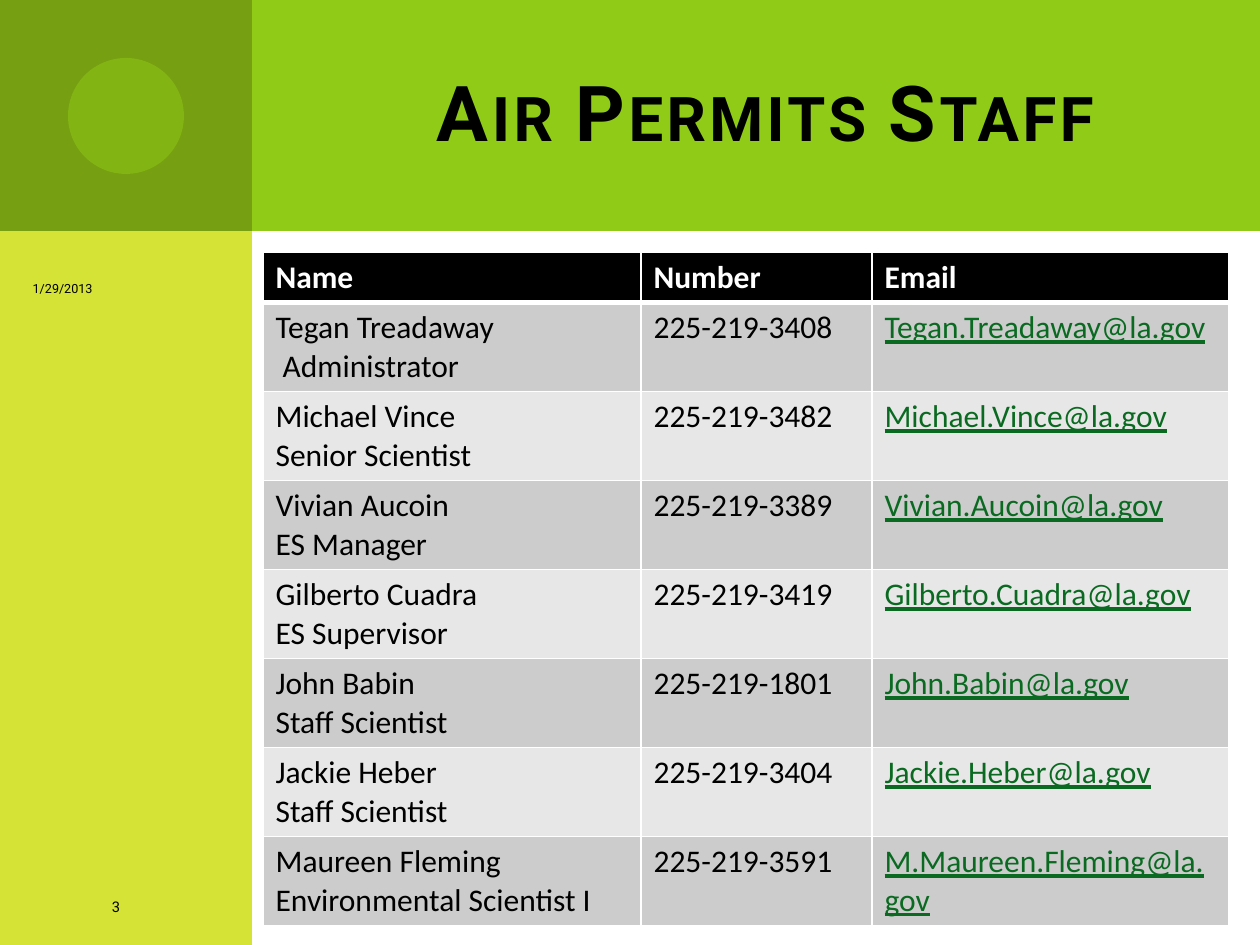
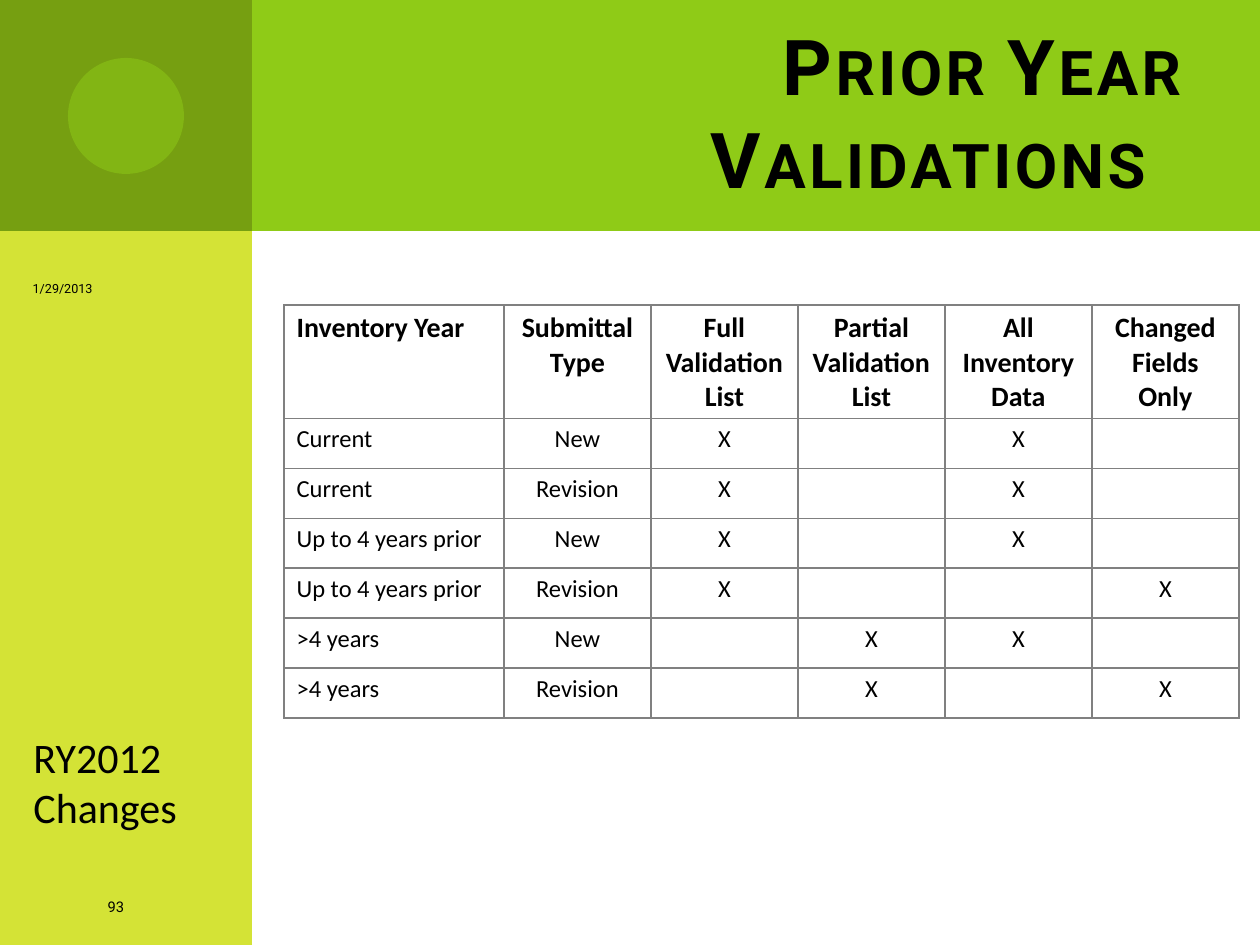
"""Builds two air permit slides, a staff directory and a validation matrix, on one green frame."""
from lxml import etree
from pptx import Presentation
from pptx.dml.color import RGBColor
from pptx.enum import shapes, text
from pptx.oxml.ns import qn
from pptx.util import Emu, Pt

BLACK = RGBColor(0x00, 0x00, 0x00)
WHITE = RGBColor(0xFF, 0xFF, 0xFF)
GREEN = RGBColor(0x8F, 0xCB, 0x17)
DARK_GREEN = RGBColor(0x76, 0x9F, 0x11)
LIME = RGBColor(0xD4, 0xE3, 0x36)
EMAIL_GREEN = RGBColor(0x0A, 0x6A, 0x21)
DARK_ROW = RGBColor(0xCC, 0xCC, 0xCC)
LIGHT_ROW = RGBColor(0xE7, 0xE7, 0xE7)
GRID_GREY = RGBColor(0x80, 0x80, 0x80)

HEADING_FONT, BODY_FONT = "Roboto", "Calibri"
DATE = "1/29/2013"
SIDEBAR_NOTE = "RY2012 Changes"

STAFF_HEADER = ("Name", "Number", "Email")
STAFF = [
    ("Tegan Treadaway\n Administrator", "225-219-3408", "Tegan.Treadaway@la.gov"),
    ("Michael Vince\nSenior Scientist", "225-219-3482", "Michael.Vince@la.gov"),
    ("Vivian Aucoin\nES Manager", "225-219-3389", "Vivian.Aucoin@la.gov"),
    ("Gilberto Cuadra\nES Supervisor", "225-219-3419", "Gilberto.Cuadra@la.gov"),
    ("John Babin\nStaff Scientist", "225-219-1801", "John.Babin@la.gov"),
    ("Jackie Heber\nStaff Scientist", "225-219-3404", "Jackie.Heber@la.gov"),
    ("Maureen Fleming\nEnvironmental Scientist I", "225-219-3591", "M.Maureen.Fleming@la.gov"),
]

VALIDATION_HEADER = ("Inventory Year", "Submittal Type", "Full Validation List",
                     "Partial Validation List", "All Inventory Data", "Changed Fields Only")
VALIDATIONS = [
    ("Current", "New", "X", "", "X", ""),
    ("Current", "Revision", "X", "", "X", ""),
    ("Up to 4 years prior", "New", "X", "", "X", ""),
    ("Up to 4 years prior", "Revision", "X", "", "", "X"),
    (">4 years", "New", "", "X", "X", ""),
    (">4 years", "Revision", "", "X", "", "X"),
]

BANDS = [
    (shapes.MSO_SHAPE.RECTANGLE, (63, 0, 1197, 231), GREEN, 100),
    (shapes.MSO_SHAPE.RECTANGLE, (0, 0, 252, 945), LIME, 100),
    (shapes.MSO_SHAPE.RECTANGLE, (0, 0, 252, 231), DARK_GREEN, 100),
    (shapes.MSO_SHAPE.OVAL, (68, 58, 116, 116), GREEN, 50),
]
LEFT, CENTER, RIGHT = text.PP_ALIGN.LEFT, text.PP_ALIGN.CENTER, text.PP_ALIGN.RIGHT
MIDDLE, TOP = text.MSO_ANCHOR.MIDDLE, text.MSO_ANCHOR.TOP


def px(length):
    return Emu(round(length * 914400 / 126))


def style(paragraph, font, size, color=BLACK, bold=False, align=LEFT, underline=False, **extra):
    paragraph.alignment = align
    for run in paragraph.runs:
        run.font.name, run.font.size = font, Pt(size)
        run.font.bold, run.font.underline = bold, underline
        run.font.color.rgb = color
        for key, value in extra.items():
            run.font._element.set(key, value)
    if not paragraph.runs:
        etree.SubElement(paragraph._p, qn("a:endParaRPr"), sz=str(size * 100))


def add_label(slide, words, box, anchor, *look, **options):
    frame = slide.shapes.add_textbox(*map(px, box)).text_frame
    frame.word_wrap, frame.vertical_anchor = True, anchor
    frame.text = words
    style(frame.paragraphs[0], *look, **options)


def add_frame(deck, title, title_box, number):
    slide = deck.slides.add_slide(deck.slide_layouts[6])
    for kind, box, color, opacity in BANDS:
        band = slide.shapes.add_shape(kind, *map(px, box))
        band.shadow.inherit = False
        band.line.fill.background()
        band.fill.solid()
        band.fill.fore_color.rgb = color
        if opacity < 100:
            tint = band.fill._xPr.find(".//" + qn("a:srgbClr"))
            etree.SubElement(tint, qn("a:alpha"), val=str(opacity * 1000))
    add_label(slide, title, title_box, MIDDLE, HEADING_FONT, 44,
              bold=True, align=RIGHT, cap="small", spc="200")
    add_label(slide, number, (53, 884, 126, 42), MIDDLE, HEADING_FONT, 10.5,
              align=CENTER, cap="small")
    add_label(slide, DATE, (0, 262, 105, 50), MIDDLE, HEADING_FONT, 9,
              align=RIGHT, cap="small")
    return slide


def set_borders(cell, color, top=1, bottom=1):
    properties = cell._tc.get_or_add_tcPr()
    for place, (side, width) in enumerate((("L", 1), ("R", 1), ("T", top), ("B", bottom))):
        line = etree.Element(qn("a:ln" + side), w=str(Pt(width)))
        fill = etree.SubElement(line, qn("a:solidFill"))
        etree.SubElement(fill, qn("a:srgbClr"), val=str(color))
        properties.insert(place, line)


def add_grid(slide, rows, corner, widths, heights, border, header_rule, fill_of, look_of):
    size = (sum(widths), sum(heights))
    grid = slide.shapes.add_table(len(rows), len(widths), *map(px, corner + size)).table
    for column, width in zip(grid.columns, widths):
        column.width = px(width)
    for r, (row, height) in enumerate(zip(rows, heights)):
        grid.rows[r].height = px(height)
        for c, words in enumerate(row):
            cell = grid.cell(r, c)
            cell.text_frame.text = words
            for paragraph in cell.text_frame.paragraphs:
                style(paragraph, BODY_FONT, **look_of(r, c))
            fill = fill_of(r)
            if fill is None:
                cell.fill.background()
            else:
                cell.fill.solid()
                cell.fill.fore_color.rgb = fill
            set_borders(cell, border, top=header_rule if r == 1 else 1,
                        bottom=header_rule if r == 0 else 1)


def staff_fill(row):
    return BLACK if row == 0 else DARK_ROW if row % 2 else LIGHT_ROW


def staff_look(row, column):
    if row == 0:
        return dict(size=18, color=WHITE, bold=True)
    is_email = column == 2
    return dict(size=18, color=EMAIL_GREEN if is_email else BLACK, underline=is_email)


def validation_look(row, column):
    return dict(size=14 if row else 16, bold=row == 0, align=CENTER if column else LEFT)


def main():
    deck = Presentation()
    deck.slide_width, deck.slide_height = px(1260), px(945)

    staff = add_frame(deck, "Air Permits Staff", (95, 32, 1071, 158), "3")
    add_grid(staff, [STAFF_HEADER] + STAFF, (263, 252), (378, 231, 357),
             [50] + [89] * len(STAFF), WHITE, 3, staff_fill, staff_look)

    validations = add_frame(deck, "Prior Year Validations", (336, 32, 861, 158), "93")
    add_label(validations, SIDEBAR_NOTE, (21, 725, 221, 115), TOP, BODY_FONT, 24)
    add_grid(validations, [VALIDATION_HEADER] + VALIDATIONS, (284, 305), [220] + [147] * 5,
             [113] + [50] * len(VALIDATIONS), GRID_GREY, 1, lambda row: None, validation_look)

    deck.save("out.pptx")


if __name__ == "__main__":
    main()
